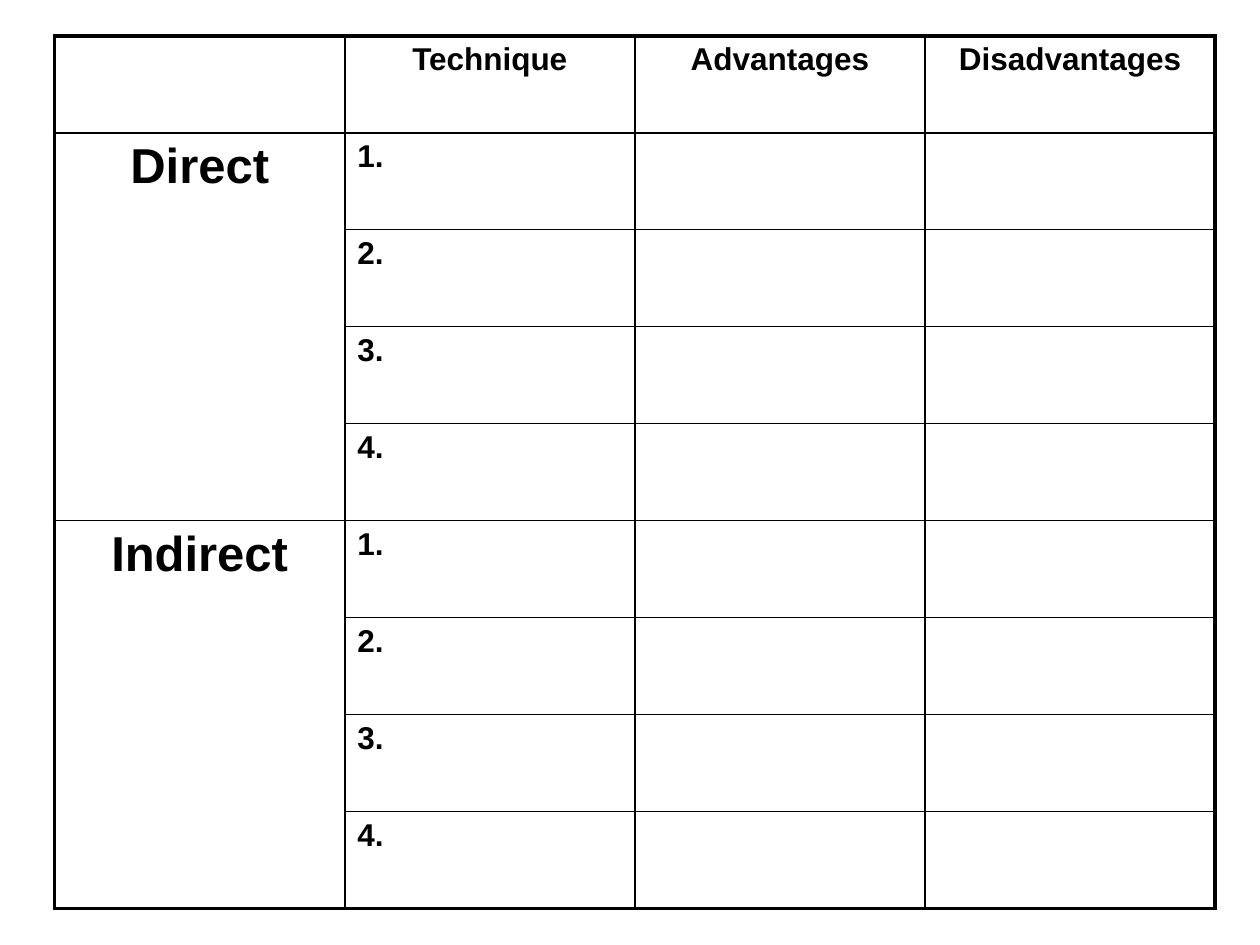
import pptx
import pptx.util
import pptx.dml.color
import pptx.enum.text
import pptx.oxml.ns
import lxml.etree

Pt = pptx.util.Pt
ALIGN = pptx.enum.text.PP_ALIGN
INK = "000000"
THIN, THICK = 1, 2.25
HEADS = ["Technique", "Advantages", "Disadvantages"]
GROUPS = ["Direct", "Indirect"]
ITEMS = 4


def color(code):
    return pptx.dml.color.RGBColor.from_string(code)


def write(cell, text, size=18, align=ALIGN.CENTER):
    cell.text_frame.text = text
    para = cell.text_frame.paragraphs[0]
    para.alignment = align
    para.space_before = Pt(8)
    font = para.runs[0].font
    font.name, font.size, font.bold = "Arial", Pt(size), True
    font.color.rgb = color(INK)


def border(cell, widths):
    """Draw the left, right, top and bottom edges, widths in points."""
    qn = pptx.oxml.ns.qn
    props = cell._tc.get_or_add_tcPr()
    for spot, (side, width) in enumerate(zip("LRTB", widths)):
        line = lxml.etree.Element(qn(f"a:ln{side}"), w=str(int(Pt(width))))
        fill = lxml.etree.SubElement(line, qn("a:solidFill"))
        lxml.etree.SubElement(fill, qn("a:srgbClr"), val=INK)
        props.insert(spot, line)


def add_grid(slide, left, top, width, height):
    rows, cols = 1 + ITEMS * len(GROUPS), 1 + len(HEADS)
    table = slide.shapes.add_table(
        rows, cols, Pt(left), Pt(top), Pt(width), Pt(height)).table
    table.first_row = table.horz_banding = False
    for col in table.columns:
        col.width = Pt(width / cols)
    for row in table.rows:
        row.height = Pt(height / rows)

    for r in range(rows):
        for c in range(cols):
            cell = table.cell(r, c)
            cell.fill.background()
            outer = (c == 0, c == cols - 1, r == 0, r == rows - 1)
            border(cell, [THICK if edge else THIN for edge in outer])

    for c, head in enumerate(HEADS, 1):
        write(table.cell(0, c), head)
    for g, group in enumerate(GROUPS):
        first = 1 + g * ITEMS
        label = table.cell(first, 0)
        label.merge(table.cell(first + ITEMS - 1, 0))
        write(label, group, 28)
        if g == len(GROUPS) - 1:
            label._tc.tcPr.find(pptx.oxml.ns.qn("a:lnB")).set(
                "w", str(int(Pt(THICK))))
        for i in range(ITEMS):
            write(table.cell(first + i, 1), f"{i + 1}.", align=ALIGN.LEFT)


def main():
    deck = pptx.Presentation()
    deck.slide_width, deck.slide_height = Pt(720), Pt(540)
    slide = deck.slides.add_slide(deck.slide_layouts[6])
    add_grid(slide, 31.2, 20.5, 663.2, 498.6)
    deck.save("out.pptx")


if __name__ == "__main__":
    main()
